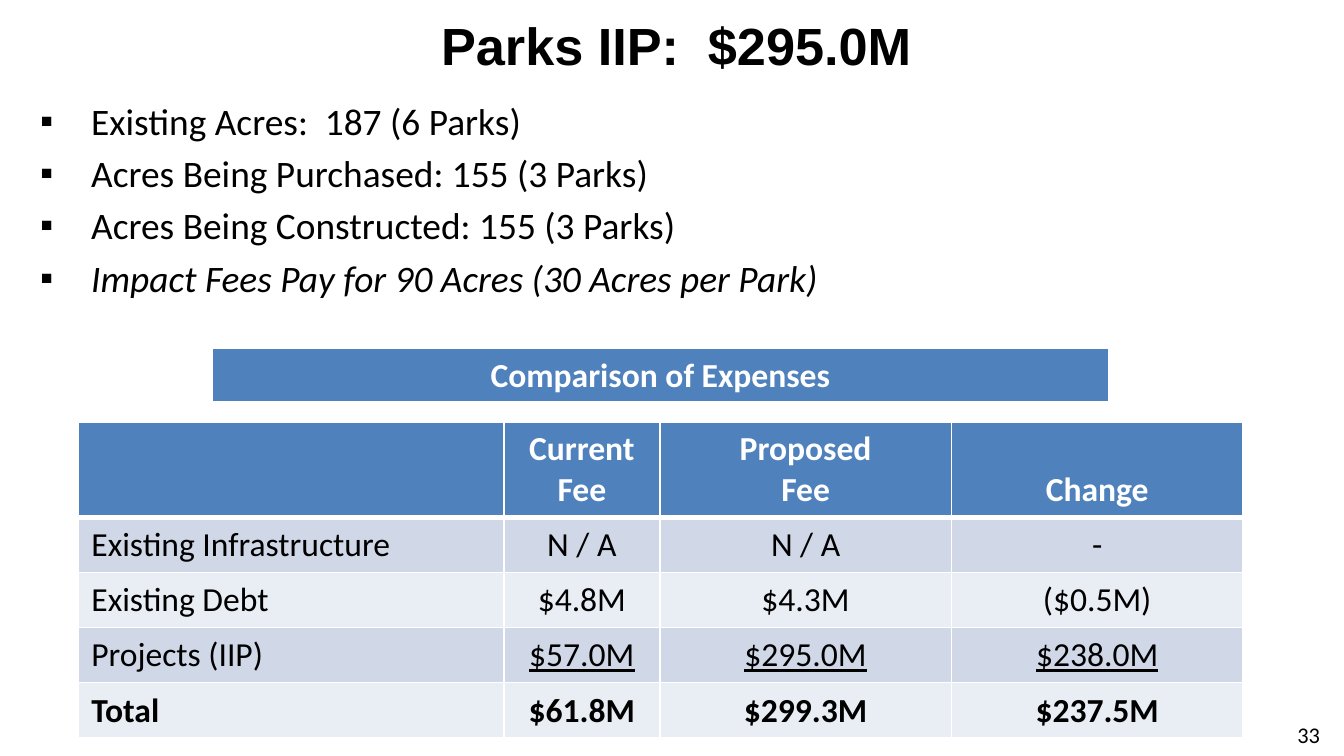
import pptx
import pptx.dml.color
import pptx.enum.text
import pptx.oxml
import pptx.oxml.ns
import pptx.util

Inches, Pt = pptx.util.Inches, pptx.util.Pt
ALIGN, ANCHOR = pptx.enum.text.PP_ALIGN, pptx.enum.text.MSO_ANCHOR
NS = pptx.oxml.ns.nsdecls("a")
BLACK, WHITE, BLUE = "000000", "FFFFFF", "4F81BD"
BANDS = ("D0D8E8", "E9EDF4")


def rgb(value):
    """Turn a hex string into a colour."""
    return pptx.dml.color.RGBColor.from_string(value)


def style(font, color=BLACK, **values):
    """Set a font's colour and its format values."""
    for name, value in ({"name": "Calibri", "bold": False} | values).items():
        setattr(font, name, value)
    font.color.rgb = rgb(color)


def add_lines(tf, lines, align, **values):
    """Write lines of text into a frame, one paragraph each."""
    tf.word_wrap = True
    for i, line in enumerate(lines):
        p = tf.paragraphs[0] if i == 0 else tf.add_paragraph()
        p.alignment = align
        r = p.add_run()
        r.text = line
        style(r.font, **values)


def add_title(s, box, text):
    """Place and format the title placeholder."""
    sp = s.shapes.title
    sp.left, sp.top, sp.width, sp.height = map(Inches, box)
    sp.text_frame.vertical_anchor = ANCHOR.MIDDLE
    add_lines(sp.text_frame, [text], ALIGN.CENTER, name="Arial", size=Pt(28), bold=True)


def add_text(s, box, lines, align, size):
    """Add a text box and return its frame."""
    tf = s.shapes.add_textbox(*map(Inches, box)).text_frame
    add_lines(tf, lines, align, size=Pt(size))
    return tf


def add_bullets(s, box, lines):
    """Add a list with square bullets and an italic last line."""
    tf = add_text(s, box, lines, ALIGN.LEFT, 20)
    for i, p in enumerate(tf.paragraphs):
        p.space_before = Pt(4 if i else 0)
        pPr = p._p.get_or_add_pPr()
        pPr.set("marL", str(Inches(0.38)))
        pPr.set("indent", str(-Inches(0.38)))
        for xml in (f'<a:buFont {NS} typeface="Arial"/>', f'<a:buChar {NS} char="▪"/>'):
            pPr.append(pptx.oxml.parse_xml(xml))
    tf.paragraphs[-1].runs[0].font.italic = True


def format_cell(cell, text, fill, align, bottom=1, **values):
    """Fill, border and write one table cell."""
    cell.fill.solid()
    cell.fill.fore_color.rgb = rgb(fill)
    cell.vertical_anchor = ANCHOR.BOTTOM
    if text:
        add_lines(cell.text_frame, text.split("\n"), align, size=Pt(18), **values)
    for i, (side, width) in enumerate(zip("LRTB", (1, 1, 1, bottom))):
        cell._tc.get_or_add_tcPr().insert(i, pptx.oxml.parse_xml(
            f'<a:ln{side} {NS} w="{Pt(width)}"><a:solidFill><a:srgbClr val="{WHITE}"/>'
            f'</a:solidFill></a:ln{side}>'))


def add_table(s, left, top, widths, heights, rows):
    """Add a table with a blue header, banded rows and an optional bold total."""
    box = map(Inches, (left, top, sum(widths), sum(heights)))
    table = s.shapes.add_table(len(rows), len(widths), *box).table
    table.horz_banding = False
    for column, width in zip(table.columns, widths):
        column.width = Inches(width)
    for i, (row, height) in enumerate(zip(rows, heights)):
        table.rows[i].height = Inches(height)
        for j, text in enumerate(row):
            if i == 0:
                values = {"fill": BLUE, "color": WHITE, "bold": True, "bottom": 3}
            else:
                values = {"fill": BANDS[(i - 1) % 2], "bold": i == len(rows) - 1,
                          "underline": i == len(rows) - 2 and j > 0}
            align = ALIGN.LEFT if i and j == 0 else ALIGN.CENTER
            format_cell(table.cell(i, j), text, align=align, **values)


def main():
    """Build the slide and save it."""
    prs = pptx.Presentation()
    prs.slide_width = Inches(10)
    prs.slide_height = prs.slide_width * 9 // 16
    s = prs.slides.add_slide(prs.slide_layouts[5])
    add_title(s, (0.17, 0.09, 9.83, 0.48), "Parks IIP:  $295.0M ")
    add_bullets(s, (0.2, 0.68, 7.42, 1.26), [
        "Existing Acres:  187 (6 Parks)",
        "Acres Being Purchased: 155 (3 Parks)",
        "Acres Being Constructed: 155 (3 Parks)",
        "Impact Fees Pay for 90 Acres (30 Acres per Park)",
    ])
    add_text(s, (9.5, 5.32, 0.42, 0.3), ["33"], ALIGN.RIGHT, 12)
    add_table(s, 0.58, 3.14, (3.17, 1.16, 2.17, 2.17), [0.71] + [0.41] * 4, [
        ("", "Current\nFee", "Proposed\nFee", "Change"),
        ("Existing Infrastructure", "N / A", "N / A", "-"),
        ("Existing Debt", "$4.8M", "$4.3M", "($0.5M)"),
        ("Projects (IIP)", "$57.0M", "$295.0M", "$238.0M"),
        ("Total", "$61.8M", "$299.3M", "$237.5M"),
    ])
    add_table(s, 1.58, 2.59, [6.67], [0.41], [["Comparison of Expenses"]])
    prs.save("out.pptx")


if __name__ == "__main__":
    main()
